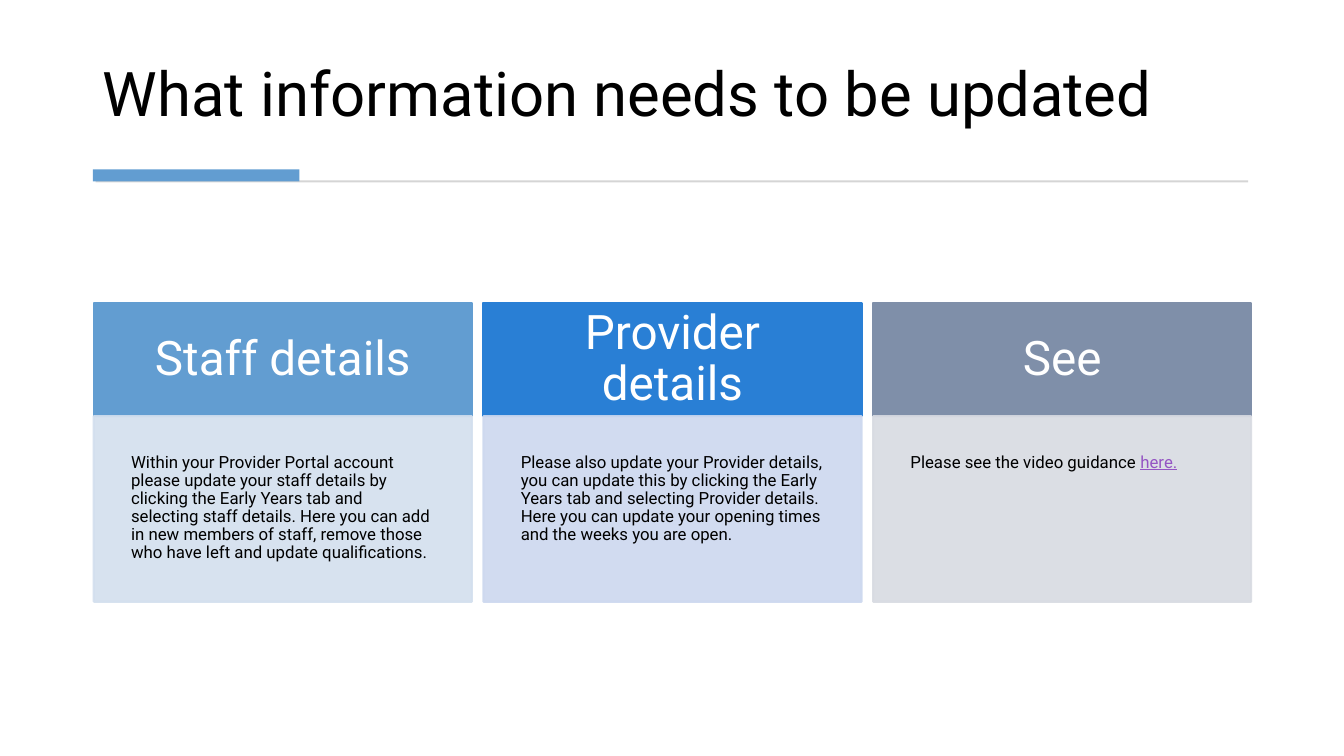
from lxml.etree import SubElement
from pptx import Presentation
from pptx.dml.color import RGBColor as Rgb
from pptx.enum.shapes import MSO_SHAPE as Kind
from pptx.enum.text import MSO_ANCHOR as Anchor, PP_ALIGN as Align
from pptx.oxml.ns import qn
from pptx.util import Inches, Pt

HUES = {
    "black": "000000", "white": "FFFFFF", "rule": "D5D5D5", "link": "9454C3",
    "sky": "629DD1", "blue": "297FD5", "slate": "7F8FA9",
    "pale sky": "D3DFEE", "pale blue": "CDD8EF", "pale slate": "D8DBE2",
}
CARDS = [
    ("sky", "Staff details",
     ["Within your Provider Portal account please update your staff details "
      "by clicking the Early Years tab and selecting staff details. Here you "
      "can add in new members of staff, remove those who have left and update "
      "qualifications."]),
    ("blue", "Provider details",
     ["Please also update your Provider details, you can update this by "
      "clicking the Early Years tab and selecting Provider details. Here you "
      "can update your opening times and the weeks you are open."]),
    ("slate", "See", ["Please see the video guidance ", "here."]),
]
LEFT, STEP, WIDE = 0.93, 3.865, 3.75
TOP, HEAD, BODY = 3.01, 1.12, 1.84


def block(left, top, wide, high, hue, edge=False):
    box = slide.shapes.add_shape(
        Kind.RECTANGLE, Inches(left), Inches(top), Inches(wide), Inches(high))
    box.shadow.inherit = False
    box.fill.solid()
    box.fill.fore_color.rgb = Rgb.from_string(HUES[hue])
    if edge:
        box.line.color.rgb = Rgb.from_string(HUES[hue])
        box.line.width = Pt(1.5)
    else:
        box.line.fill.background()
    return box


def write(box, parts, size, hue, align, anchor, inset):
    frame = box.text_frame
    frame.word_wrap = True
    frame.vertical_anchor = anchor
    frame.margin_left = frame.margin_right = Inches(inset)
    frame.margin_top = frame.margin_bottom = Inches(inset)
    para = frame.paragraphs[0]
    para.alignment = align
    para.line_spacing = 0.9
    para.font.name = "Roboto"
    para.font.size = Pt(size)
    para.font.color.rgb = Rgb.from_string(HUES[hue])
    for part in parts:
        para.add_run().text = part
    return para


deck = Presentation()
deck.slide_width, deck.slide_height = Inches(13.33), Inches(7.5)
slide = deck.slides.add_slide(deck.slide_layouts[5])

title = slide.shapes.title
title.left, title.top = Inches(0.92), Inches(0.28)
title.width, title.height = Inches(11.49), Inches(1.11)
write(title, ["What information needs to be updated"], 44, "black",
      Align.LEFT, Anchor.BOTTOM, 0.1)

block(0.95, 1.79, 11.43, 0.02, "rule")
block(0.92, 1.68, 2.05, 0.12, "sky")

for col, (hue, name, parts) in enumerate(CARDS):
    left = LEFT + col * STEP
    head = block(left, TOP, WIDE, HEAD, hue, True)
    write(head, [name], 34, "white", Align.CENTER, Anchor.MIDDLE, 0.3)
    body = block(left, TOP + HEAD, WIDE, BODY, "pale " + hue, True)
    for tint in body._element.spPr.iter(qn("a:srgbClr")):
        SubElement(tint, qn("a:alpha")).set("val", "90000")
    para = write(body, parts, 12, "black", Align.LEFT, Anchor.TOP, 0.37)
    for run in para.runs[1:]:
        run.font.underline = True
        run.font.color.rgb = Rgb.from_string(HUES["link"])

deck.save("out.pptx")
